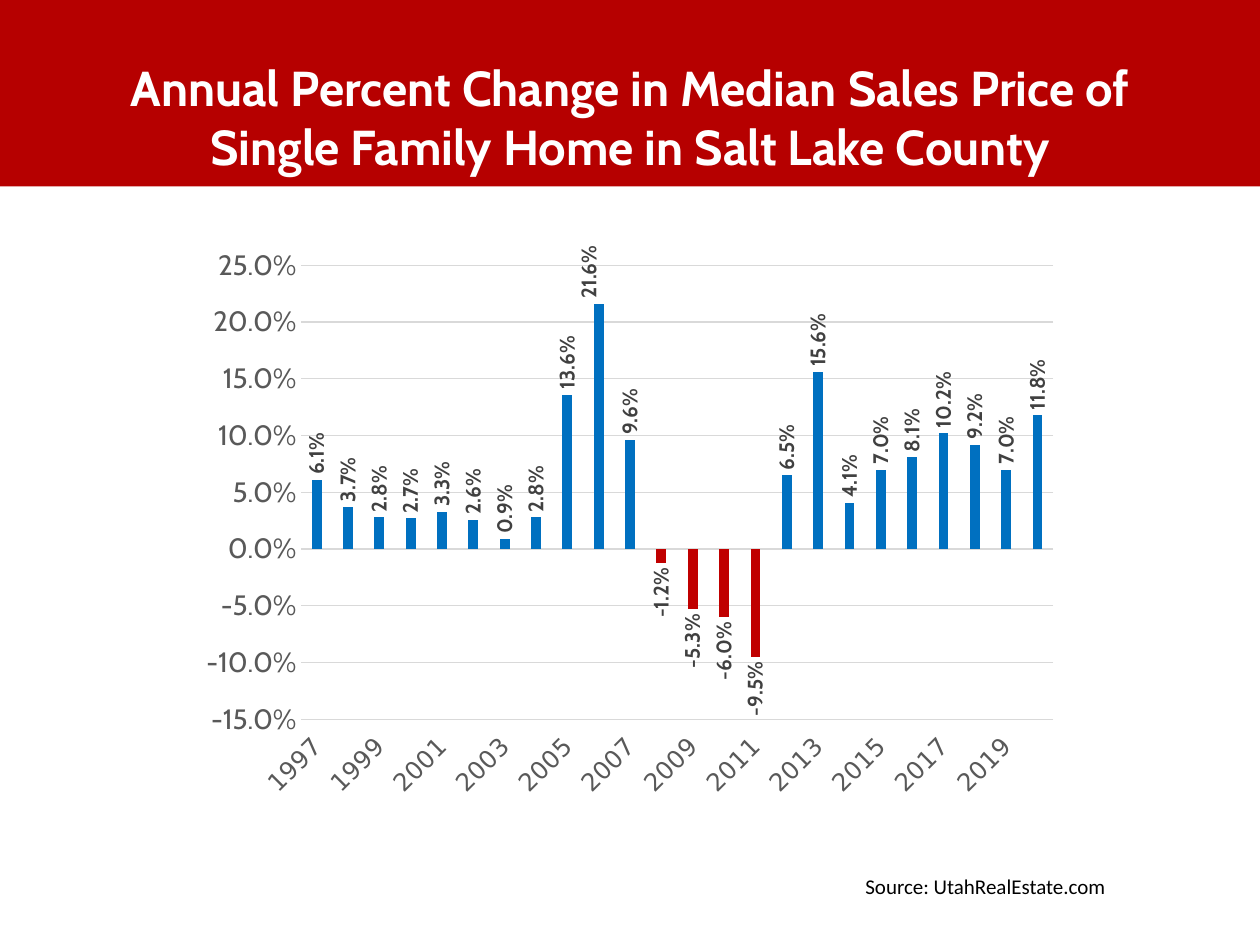
from lxml.etree import SubElement
from pptx import Presentation
from pptx.chart.data import CategoryChartData
from pptx.dml.color import RGBColor
from pptx.enum.chart import XL_CHART_TYPE, XL_LABEL_POSITION, XL_TICK_LABEL_POSITION, XL_TICK_MARK
from pptx.enum.shapes import MSO_SHAPE
from pptx.enum.text import MSO_ANCHOR, PP_ALIGN
from pptx.oxml.ns import qn
from pptx.util import Inches, Pt

BANNER = RGBColor(0xB6, 0x00, 0x00)
WHITE = RGBColor(0xFF, 0xFF, 0xFF)
BLACK = RGBColor(0x00, 0x00, 0x00)
RISE = RGBColor(0x00, 0x70, 0xC0)
FALL = RGBColor(0xC0, 0x00, 0x00)
GRID = RGBColor(0xD9, 0xD9, 0xD9)
AXIS_TEXT = RGBColor(0x59, 0x59, 0x59)
LABEL_TEXT = RGBColor(0x40, 0x40, 0x40)
HEAD, BODY, YEARS = "Cabin", "Calibri", "DejaVu Sans"
COLUMNS, ROWS = 100, 75

CHANGES = [0.061, 0.037, 0.028, 0.027, 0.033, 0.026, 0.009, 0.028,
           0.136, 0.216, 0.096, -0.012, -0.053, -0.06, -0.095, 0.065,
           0.156, 0.041, 0.07, 0.081, 0.102, 0.092, 0.07, 0.118]
FIRST_YEAR, PEAK_YEAR = 1997, 2006


def set_font(font, name, size, color, bold=False):
    font.name, font.size, font.bold = name, Pt(size), bold
    font.color.rgb = color


def rotate(chart, query, degrees):
    for body in chart.element.xpath(query + "/c:txPr/a:bodyPr"):
        body.set("rot", str(degrees * 60000))
        body.set("vert", "horz")


def add_layout(parent, modes, **percents):
    for old in parent.findall(qn("c:layout")):
        parent.remove(old)
    layout = SubElement(parent, qn("c:layout"))
    manual = SubElement(layout, qn("c:manualLayout"))
    shares = {tag: value / 100 for tag, value in percents.items()}
    for tag, value in {**modes, **shares}.items():
        SubElement(manual, qn("c:" + tag)).set("val", str(value))
    return layout


class SlideBuilder:
    """Holds the slide and places elements by columns and rows of its grid."""

    def __init__(self, prs):
        self.column, self.row = prs.slide_width / COLUMNS, prs.slide_height / ROWS
        self.slide = prs.slides.add_slide(prs.slide_layouts[5])

    def box(self, x, y, w, h):
        return (int(x * self.column), int(y * self.row),
                int(w * self.column), int(h * self.row))

    def banner(self, *place):
        sp = self.slide.shapes.add_shape(MSO_SHAPE.RECTANGLE, *self.box(*place))
        sp.shadow.inherit = False
        sp.fill.solid()
        sp.fill.fore_color.rgb = BANNER
        sp.line.fill.background()
        self.slide.shapes.element.insert(2, sp.element)

    def title(self, text, *place):
        sp = self.slide.shapes.title
        sp.left, sp.top, sp.width, sp.height = self.box(*place)
        tf = sp.text_frame
        tf.text = text
        tf.word_wrap = True
        tf.vertical_anchor = MSO_ANCHOR.TOP
        p = tf.paragraphs[0]
        p.alignment = PP_ALIGN.CENTER
        set_font(p.runs[0].font, HEAD, 28, WHITE, True)

    def note(self, text, *place):
        tf = self.slide.shapes.add_textbox(*self.box(*place)).text_frame
        tf.text = text
        tf.word_wrap = False
        set_font(tf.paragraphs[0].runs[0].font, BODY, 12, BLACK)

    def column_chart(self, first_year, values, peak, *place):
        data = CategoryChartData(number_format="0.0%")
        data.categories = [str(first_year + i) for i in range(len(values))]
        data.add_series("Series 1", values)
        chart = self.slide.shapes.add_chart(
            XL_CHART_TYPE.COLUMN_CLUSTERED, *self.box(*place), data).chart
        chart.has_legend = chart.has_title = False
        set_font(chart.font, YEARS, 8, BLACK)
        self.style_axes(chart)
        self.style_columns(chart.plots[0], values, peak)
        rotate(chart, "//c:catAx", -45)
        rotate(chart, "//c:dLbls", -90)
        rotate(chart, "//c:dLbl", -90)
        area = chart.element.xpath("//c:plotArea")[0]
        modes = {"layoutTarget": "inner", "xMode": "edge", "yMode": "edge"}
        area.insert(0, add_layout(area, modes, x=12.7, y=4.75, w=85.3, h=79.6))

    def style_axes(self, chart):
        cat, val = chart.category_axis, chart.value_axis
        for axis, name, size in ((cat, YEARS, 14), (val, HEAD, 16)):
            axis.major_tick_mark = axis.minor_tick_mark = XL_TICK_MARK.NONE
            set_font(axis.tick_labels.font, name, size, AXIS_TEXT)
        cat.tick_label_position = XL_TICK_LABEL_POSITION.LOW
        val.minimum_scale, val.maximum_scale, val.major_unit = -0.15, 0.25, 0.05
        val.tick_labels.number_format = "0.0%"
        val.tick_labels.number_format_is_linked = False
        val.format.line.fill.background()
        for line in (cat.format.line, val.major_gridlines.format.line):
            line.color.rgb = GRID
            line.width = Pt(0.75)
        skip = cat._element.makeelement(qn("c:tickLblSkip"), {"val": "2"})
        cat._element.find(qn("c:noMultiLvlLbl")).addprevious(skip)

    def style_columns(self, plot, values, peak):
        plot.gap_width, plot.overlap = 219, -27
        plot.vary_by_categories = False
        series = plot.series[0]
        series.invert_if_negative = False
        series.format.fill.solid()
        series.format.fill.fore_color.rgb = RISE
        for i, value in enumerate(values):
            if value < 0:
                fill = series.points[i].format.fill
                fill.solid()
                fill.fore_color.rgb = FALL
        labels = series.data_labels
        labels.show_value = True
        labels.number_format, labels.number_format_is_linked = "0.0%", False
        labels.position = XL_LABEL_POSITION.OUTSIDE_END
        label = series.points[peak].data_label
        label.position = XL_LABEL_POSITION.OUTSIDE_END
        for font in (labels.font, label.font):
            set_font(font, HEAD, 12, LABEL_TEXT, True)
        peak_label = labels._element.find(qn("c:dLbl"))
        peak_label.insert(1, add_layout(peak_label, {}, x=-1.1, y=0))


def main():
    prs = Presentation()
    prs.slide_width, prs.slide_height = Inches(10), Inches(7.5)
    s = SlideBuilder(prs)
    s.banner(0, 0, 100, 14.8)
    s.title("Annual Percent Change in Median Sales Price of "
            "Single Family Home in Salt Lake County", 5, 4.05, 90, 12.5)
    s.note("Source: UtahRealEstate.com", 67.7, 68.8, 21.7, 3)
    s.column_chart(FIRST_YEAR, CHANGES, PEAK_YEAR - FIRST_YEAR, 15, 18.9, 70, 45.3)
    prs.save("out.pptx")


if __name__ == "__main__":
    main()
